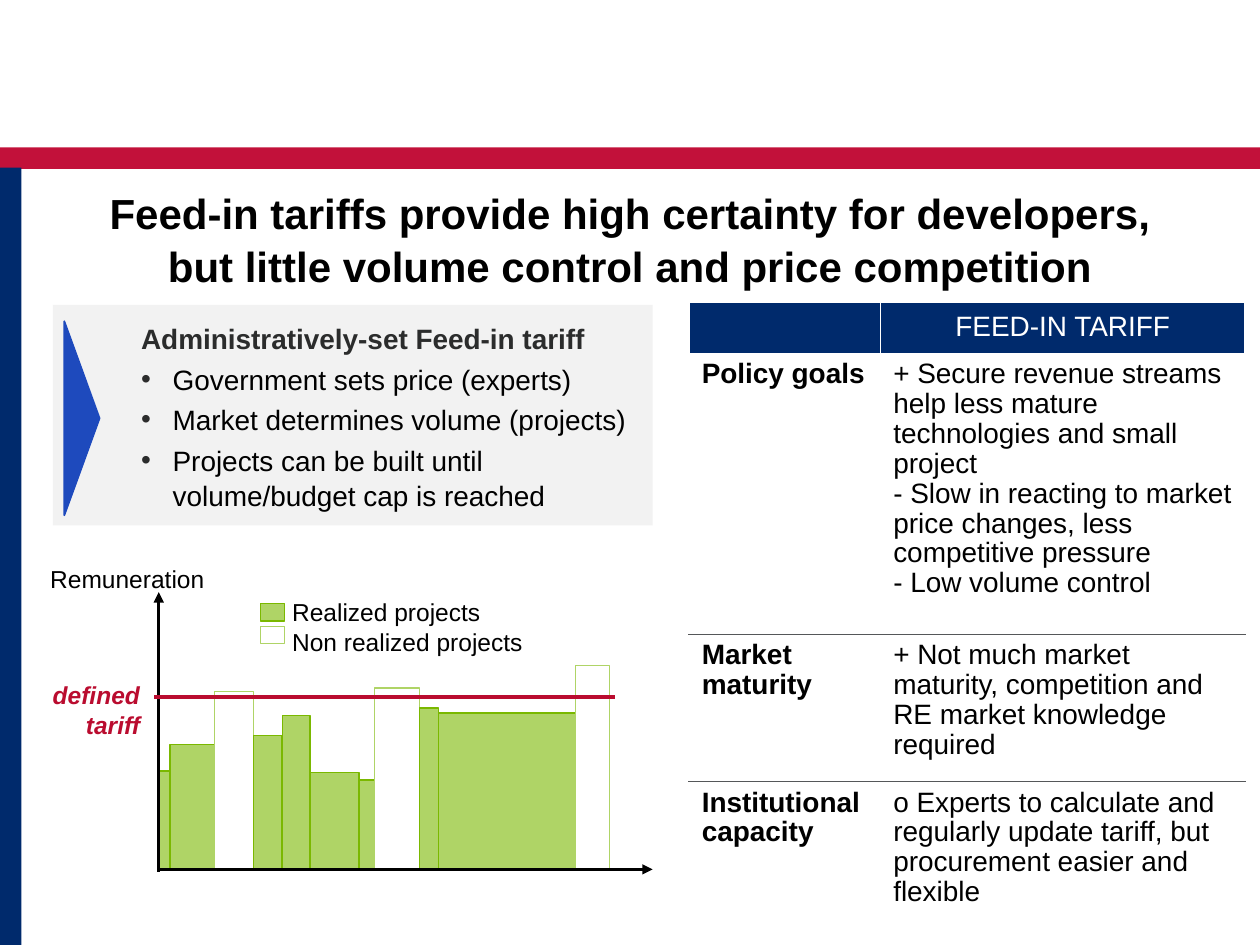
from lxml import etree
from pptx import Presentation
from pptx.dml.color import RGBColor
from pptx.enum.shapes import MSO_CONNECTOR, MSO_SHAPE
from pptx.enum.text import MSO_ANCHOR, MSO_AUTO_SIZE, PP_ALIGN
from pptx.oxml.ns import qn
from pptx.util import Inches, Pt

RECTANGLE, TRIANGLE = MSO_SHAPE.RECTANGLE, MSO_SHAPE.ISOSCELES_TRIANGLE
STRAIGHT = MSO_CONNECTOR.STRAIGHT
LEFT, CENTER, RIGHT = PP_ALIGN.LEFT, PP_ALIGN.CENTER, PP_ALIGN.RIGHT
TOP, MIDDLE = MSO_ANCHOR.TOP, MSO_ANCHOR.MIDDLE
NO_AUTOFIT = MSO_AUTO_SIZE.NONE

NAVY, CRIMSON, RED, BLUE = "002A6C", "C2113A", "BA0C2F", "1E4ABD"
GREEN, LIGHT_GREEN = "7AB800", "AFD466"
BLACK, WHITE, CHARCOAL, RULE, PANEL = "000000", "FFFFFF", "2B2C2C", "555759", "F2F2F2"


def paint(fill, color):
    if color is None:
        fill.background()
    else:
        fill.solid()
        fill.fore_color.rgb = RGBColor.from_string(color)


def write(frame, text, size=16, color=BLACK, bold=False, italic=False,
          align=LEFT, anchor=TOP, spacing=1.0):
    frame.word_wrap = True
    frame.vertical_anchor = anchor
    frame.text = text
    for paragraph in frame.paragraphs:
        paragraph.alignment = align
        paragraph.line_spacing = spacing
        paragraph.space_before = Pt(0)
        for run in paragraph.runs:
            run.font.name = "Arial"
            run.font.size = Pt(size)
            run.font.bold = bold
            run.font.italic = italic
            paint(run.font.fill, color)


presentation = Presentation()
presentation.slide_width, presentation.slide_height = Inches(10), Inches(7.5)
column = presentation.slide_width // 1000
row = presentation.slide_height // 750
slide = presentation.slides.add_slide(presentation.slide_layouts[1])
shapes = slide.shapes

title = shapes.title
title.left, title.top = 75 * column, 142 * row
title.width, title.height = 850 * column, 50 * row
title.text_frame.auto_size = NO_AUTOFIT
write(title.text_frame,
      "Feed-in tariffs provide high certainty for developers, "
      "but little volume control and price competition",
      size=24, bold=True, align=CENTER, spacing=1.05)

baseline, tariff = 690, 553
edges = [126, 135, 170, 201, 224, 246, 285, 297, 333, 348, 457, 484]
tops = [612, 591, 549, 584, 568, 613, 619, 546, 562, 566, 528]
boxes = [
    (RECTANGLE, 0, 117, 1000, 17, CRIMSON, None, 0),
    (RECTANGLE, 0, 133, 17, 617, NAVY, None, 0),
    (RECTANGLE, 42, 242, 476, 175, PANEL, None, 0),
    (TRIANGLE, -12, 318, 154, 28, BLUE, BLUE, 1),
    (RECTANGLE, 207, 479, 19, 14, LIGHT_GREEN, GREEN, 0.75),
    (RECTANGLE, 207, 497, 19, 14, WHITE, LIGHT_GREEN, 0.75),
]
for left, right, top in zip(edges, edges[1:], tops):
    realized = top > tariff
    boxes.append((RECTANGLE, left, top, right - left, baseline - top,
                  LIGHT_GREEN if realized else None,
                  GREEN if realized else LIGHT_GREEN, 0.75))

for kind, left, top, width, height, fill, line, weight in boxes:
    shape = shapes.add_shape(kind, left * column, top * row, width * column, height * row)
    shape.shadow.inherit = False
    shape.rotation = 90 if kind == TRIANGLE else 0
    paint(shape.fill, fill)
    shape.line.width = Pt(weight)
    paint(shape.line.fill, line)

for x1, y1, x2, y2, color, weight, arrow in [
    (126, 692, 126, 470, BLACK, 1.5, True),
    (488, tariff, 122, tariff, RED, 2.25, False),
    (126, baseline, 518, baseline, BLACK, 1.5, True),
]:
    connector = shapes.add_connector(STRAIGHT, x1 * column, y1 * row, x2 * column, y2 * row)
    connector.line.width = Pt(weight)
    paint(connector.line.fill, color)
    if arrow:
        etree.SubElement(connector.line._get_or_add_ln(), qn("a:tailEnd"), type="triangle")
    etree.SubElement(connector._element.spPr, qn("a:effectLst"))

for left, top, width, height, text, style in [
    (222, 469, 204, 57, "Realized projects\nNon realized projects", {}),
    (30, 443, 143, 34, "Remuneration", {}),
    (26, 535, 95, 57, "defined tariff",
     {"color": RED, "bold": True, "italic": True, "align": RIGHT}),
]:
    label = shapes.add_textbox(left * column, top * row, width * column, height * row)
    write(label.text_frame, text, size=14, **style)

body = slide.placeholders[1]
body.left, body.top, body.width, body.height = 102 * column, 249 * row, 440 * column, 107 * row
body.text_frame.auto_size = NO_AUTOFIT
write(body.text_frame,
      "Administratively-set Feed-in tariff\n"
      "Government sets price (experts)\n"
      "Market determines volume (projects)\n"
      "Projects can be built until volume/budget cap is reached", spacing=1.05)
heading, *bullets = body.text_frame.paragraphs
heading.runs[0].font.bold = True
paint(heading.runs[0].font.fill, CHARCOAL)
properties = heading._p.get_or_add_pPr()
properties.set("marL", "0")
properties.set("indent", "0")
etree.SubElement(properties, qn("a:buNone"))
for paragraph in bullets:
    paragraph.space_before = Pt(3)
    properties = paragraph._p.get_or_add_pPr()
    properties.set("marL", str(25 * column))
    properties.set("indent", str(-25 * column))
    bullet_color = etree.SubElement(properties, qn("a:buClr"))
    etree.SubElement(bullet_color, qn("a:srgbClr"), val=CHARCOAL)
    etree.SubElement(properties, qn("a:buFont"), typeface="Arial")
    etree.SubElement(properties, qn("a:buChar"), char="•")
body._element.getparent().append(body._element)

rows = [
    ("", "FEED-IN TARIFF"),
    ("Policy goals",
     "+ Secure revenue streams help less mature technologies and small project\n"
     "- Slow in reacting to market price changes, less competitive pressure\n"
     "- Low volume control"),
    ("Market maturity",
     "+ Not much market maturity, competition and RE market knowledge required"),
    ("Institutional capacity",
     "o Experts to calculate and regularly update tariff, "
     "but procurement easier and flexible"),
]
row_heights = [37, 223, 117, 116]
table = shapes.add_table(len(rows), 2, 547 * column, 240 * row,
                         441 * column, sum(row_heights) * row).table
table.horz_banding = False
table.columns[0].width, table.columns[1].width = 152 * column, 289 * column
for r, (texts, height) in enumerate(zip(rows, row_heights)):
    table.rows[r].height = height * row
    header = r == 0
    above = RULE if r > 1 else WHITE
    below = RULE if r in (1, 2) else WHITE
    for c, text in enumerate(texts):
        cell = table.cell(r, c)
        write(cell.text_frame, text, color=WHITE if header else BLACK,
              bold=not header and c == 0, align=CENTER if header else LEFT, spacing=0.96)
        cell.vertical_anchor = MIDDLE if header else TOP
        for side, color in (("L", WHITE), ("R", WHITE), ("T", above), ("B", below)):
            weight = Pt(0.5) if color == RULE else Pt(1)
            border = etree.SubElement(cell._tc.get_or_add_tcPr(), qn("a:ln" + side), w=str(weight))
            border_fill = etree.SubElement(border, qn("a:solidFill"))
            etree.SubElement(border_fill, qn("a:srgbClr"), val=color)
        paint(cell.fill, NAVY if header else None)

presentation.save("out.pptx")
